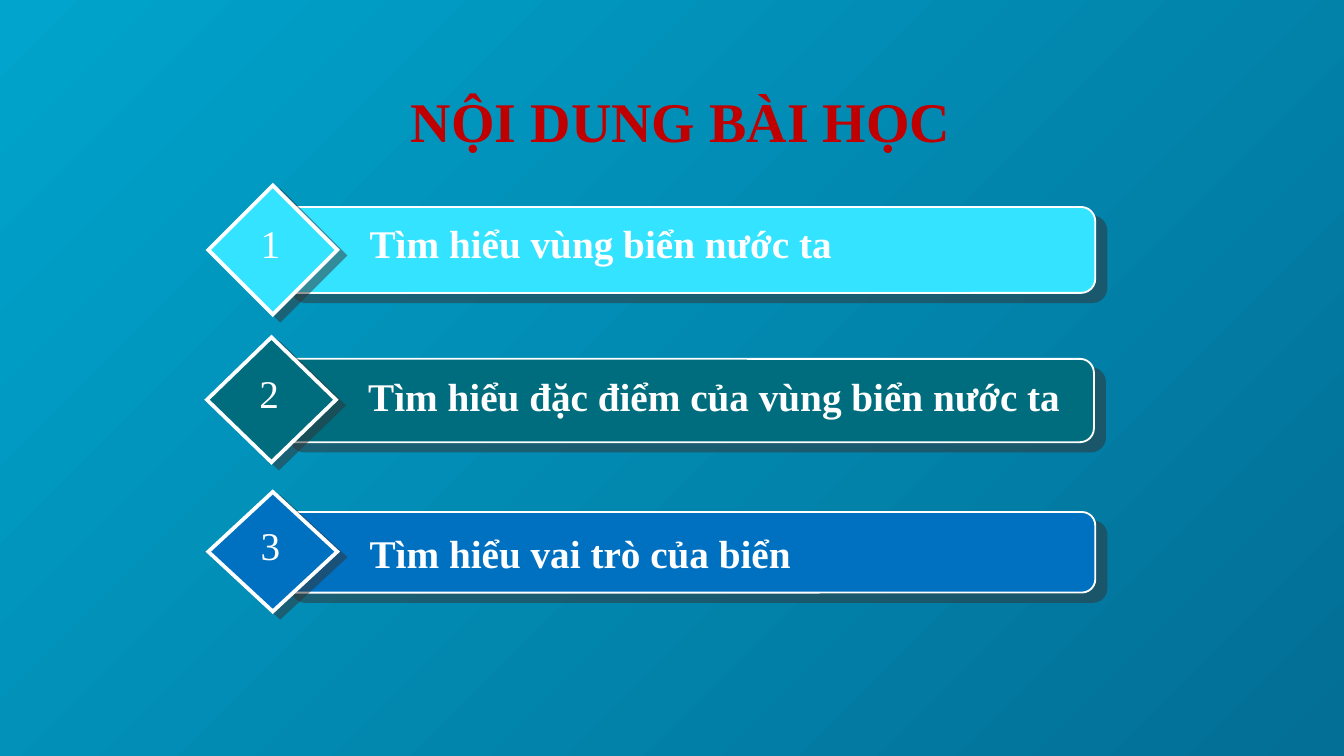
from dataclasses import dataclass

import pptx
import pptx.dml.color
import pptx.enum.shapes
import pptx.enum.text
import pptx.oxml
import pptx.oxml.ns
import pptx.util
from pptx.util import Inches

FONT = "Times New Roman"
COLORS = {
    "bg_start": "00A4CC",
    "bg_end": "036E96",
    "title": "C00000",
    "white": "FFFFFF",
    "shadow": "333333",
    "cyan": "33E3FF",
    "teal": "006D7E",
    "blue": "0070C0",
}


@dataclass
class Topic:
    number: str
    label: str
    color: str
    left: float
    top: float
    diamond_height: float
    bar_top: float
    bar_height: float
    label_top: float
    label_width: float
    number_top: float


TOPICS = [
    Topic("1", "Tìm hiểu vùng biển nước ta", "cyan",
          1.55, 1.38, 0.96, 1.54, 0.64, 1.59, 4.79, 1.59),
    Topic("2", "Tìm hiểu đặc điểm của vùng biển nước ta", "teal",
          1.54, 2.51, 0.93, 2.67, 0.62, 2.73, 5.4, 2.71),
    Topic("3", "Tìm hiểu vai trò của biển", "blue",
          1.55, 3.66, 0.89, 3.81, 0.6, 3.9, 4.79, 3.84),
]


def rgb(name: str) -> pptx.dml.color.RGBColor:
    return pptx.dml.color.RGBColor.from_string(COLORS[name])


def add_shadow(sp, distance: float, angle: int) -> None:
    """Give a shape a hard, half-transparent shadow."""
    sp.shadow.inherit = False
    effects = sp._element.spPr.find(pptx.oxml.ns.qn("a:effectLst"))
    effects.append(pptx.oxml.parse_xml(
        f'<a:outerShdw {pptx.oxml.ns.nsdecls("a")} blurRad="0" '
        f'dist="{pptx.util.Pt(distance)}" dir="{angle * 60000}" algn="ctr" rotWithShape="0">'
        f'<a:srgbClr val="{COLORS["shadow"]}"><a:alpha val="50000"/></a:srgbClr>'
        '</a:outerShdw>'))


def add_panel(shapes, kind, left: float, top: float, width: float, height: float,
              color: str, line_width: float, distance: float, angle: int) -> None:
    sp = shapes.add_shape(kind, Inches(left), Inches(top), Inches(width), Inches(height))
    sp.fill.solid()
    sp.fill.fore_color.rgb = rgb(color)
    sp.line.color.rgb = rgb("white")
    sp.line.width = pptx.util.Pt(line_width)
    # Sharp outline corners
    sp._element.spPr.find(pptx.oxml.ns.qn("a:ln")).append(pptx.oxml.parse_xml(
        f'<a:miter {pptx.oxml.ns.nsdecls("a")} lim="800000"/>'))
    add_shadow(sp, distance, angle)


def add_text(shapes, text: str, left: float, top: float, width: float, height: float,
             size: float, color: str, bold: bool, insets: tuple[float, float], wrap: bool = True):
    sp = shapes.add_textbox(Inches(left), Inches(top), Inches(width), Inches(height))
    tf = sp.text_frame
    tf.word_wrap = wrap
    tf.margin_left = tf.margin_right = Inches(insets[0])
    tf.margin_top = tf.margin_bottom = Inches(insets[1])
    tf.text = text
    font = tf.paragraphs[0].runs[0].font
    font.name, font.size, font.bold = FONT, pptx.util.Pt(size), bold
    font.color.rgb = rgb(color)
    return sp


def add_topic(slide, topic: Topic) -> None:
    shapes = slide.shapes.add_group_shape().shapes
    kinds = pptx.enum.shapes.MSO_SHAPE
    # Bar and diamond
    add_panel(shapes, kinds.ROUNDED_RECTANGLE, topic.left + 0.54, topic.bar_top,
              6.06, topic.bar_height, topic.color, 1, 7.8, 40)
    add_panel(shapes, kinds.DIAMOND, topic.left, topic.top,
              0.96, topic.diamond_height, topic.color, 2, 5, 37)
    # Label and number
    label = add_text(shapes, topic.label, topic.left + 1.13, topic.label_top,
                     topic.label_width, 0.43, 21, "white", True, (0.07, 0.04))
    number = add_text(shapes, topic.number, topic.left + 0.32, topic.number_top,
                      0.3, 0.43, 21, "white", False, (0.07, 0.04), wrap=False)
    for sp in (label, number):
        sp.fill.solid()
        sp.fill.fore_color.rgb = rgb(topic.color)
        sp.text_frame.auto_size = pptx.enum.text.MSO_AUTO_SIZE.SHAPE_TO_FIT_TEXT
        sp.text_frame.paragraphs[0].alignment = pptx.enum.text.PP_ALIGN.JUSTIFY


def main() -> None:
    prs = pptx.Presentation()
    # Widescreen, 16:9
    prs.slide_width, prs.slide_height = Inches(10), Inches(10 * 9 / 16)
    slide = prs.slides.add_slide(prs.slide_layouts[6])

    # Diagonal background
    fill = slide.background.fill
    fill.gradient()
    fill.gradient_angle = 315
    for stop, name in zip(fill.gradient_stops, ("bg_start", "bg_end")):
        stop.color.rgb = rgb(name)

    # Title
    add_text(slide.shapes, "NỘI DUNG BÀI HỌC", 2.96, 0.54, 5, 0.38,
             30, "title", True, (0.1, 0.1))

    # Lesson topics
    for topic in TOPICS:
        add_topic(slide, topic)

    prs.save("out.pptx")


if __name__ == "__main__":
    main()
